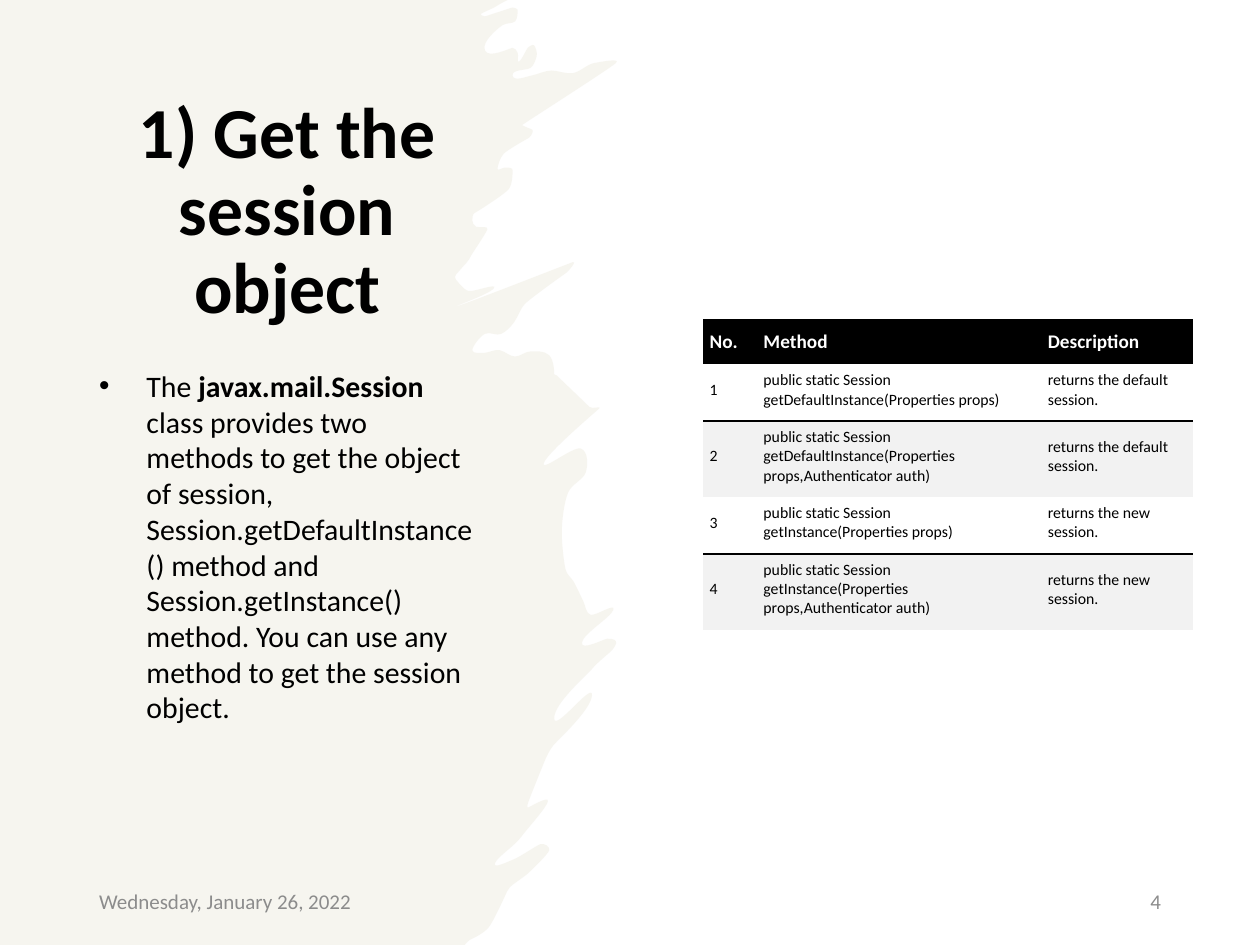
import pptx
import pptx.util
import pptx.dml.color
import pptx.enum.text
import pptx.oxml
import math
from dataclasses import dataclass

Pt = pptx.util.Pt
RGB = pptx.dml.color.RGBColor.from_string
ALIGN = pptx.enum.text.PP_ALIGN
MIDDLE = pptx.enum.text.MSO_ANCHOR.MIDDLE
qn = pptx.oxml.ns.qn
NS = 'xmlns:a="http://schemas.openxmlformats.org/drawingml/2006/main"'
PLAIN = "{2D5ABB26-0587-4C30-8999-92F81FD0307C}"  # table style without grid


@dataclass(frozen=True)
class Theme:
    font: str = "Calibri"
    ink: str = "000000"
    paper: str = "FFFFFF"
    sand: str = "EEECE1"
    band: str = "F2F2F2"
    grey: str = "8C8C8C"
    title: float = 41
    body: float = 17
    foot: float = 12
    head: float = 11
    cell: float = 9


THEME = Theme()

# Torn edge of the panel, bottom to top, on a grid 489 wide and 750 high
GRID = 489, 750
EDGE = [
    (369, 750), (373, 746), (388, 736), (401, 711), (405, 704), (417, 695),
    (436, 675), (429, 670), (408, 682), (393, 685), (414, 664), (435, 636),
    (419, 641), (419, 638), (432, 605), (439, 592), (470, 552), (440, 570),
    (470, 531), (485, 517), (489, 509), (482, 507), (462, 510), (487, 484),
    (469, 488), (463, 477), (455, 461), (449, 452), (446, 423), (451, 391),
    (465, 375), (461, 356), (432, 367), (476, 324), (468, 323), (442, 298),
    (440, 297), (436, 282), (421, 279), (409, 283), (397, 278), (385, 280),
    (375, 278), (385, 265), (398, 265), (408, 256), (417, 241), (449, 217),
    (455, 208), (363, 243), (392, 229), (372, 231), (362, 222), (362, 218),
    (370, 209), (374, 203), (387, 182), (378, 180), (375, 175), (377, 169),
    (404, 150), (407, 135), (401, 133), (395, 134), (400, 122), (419, 110),
    (423, 104), (418, 101), (415, 99), (489, 50), (472, 50), (455, 58),
    (438, 56), (422, 60), (407, 60), (421, 54), (426, 45), (424, 36),
    (419, 38), (412, 49), (411, 42), (407, 38), (385, 40), (399, 20),
    (409, 17), (411, 8), (407, 6), (385, 13), (382, 11), (394, 5), (403, 0),
]

HEADS = ["No.", "Method", "Description"]
CALLS = [
    ("getDefaultInstance(Properties props)", "default"),
    ("getDefaultInstance(Properties props,Authenticator auth)", "default"),
    ("getInstance(Properties props)", "new"),
    ("getInstance(Properties props,Authenticator auth)", "new"),
]


def pull(a, b, c):
    """Give the handle at b, no longer than a third of its shorter side."""
    span = math.dist(a, c) or 1
    size = min(math.dist(a, b), math.dist(b, c)) / 3
    return (c[0] - a[0]) / span * size, (c[1] - a[1]) / span * size


def bend(panel):
    """Turn the straight steps of the torn edge into curves."""
    steps = list(panel._element.iter(qn("a:lnTo")))[-len(EDGE):]
    dots = [(int(s[0].get("x")), int(s[0].get("y"))) for s in steps]
    ends = [dots[0], *dots, dots[-1]]
    for a, b, c, d, step in zip(ends, ends[1:], ends[2:], ends[3:], steps[1:]):
        out, back = pull(a, b, c), pull(b, c, d)
        trio = (b[0] + out[0], b[1] + out[1]), (c[0] - back[0], c[1] - back[1]), c
        marks = "".join(f'<a:pt x="{x:.0f}" y="{y:.0f}"/>' for x, y in trio)
        step.getparent().replace(step, pptx.oxml.parse_xml(
            f"<a:cubicBezTo {NS}>{marks}</a:cubicBezTo>"))


def place(shape, box):
    shape.left, shape.top, shape.width, shape.height = map(Pt, box)


def style(runs, size, color, bold=False):
    for run in runs:
        run.font.name = THEME.font
        run.font.size = Pt(size)
        run.font.bold = bold
        run.font.color.rgb = RGB(color)


def draw_panel(slide, box):
    x, y, w, h = box
    scale = Pt(w) / GRID[0], Pt(h) / GRID[1]
    pen = slide.shapes.build_freeform(0, 0, scale=scale)
    pen.add_line_segments([(0, GRID[1]), *EDGE], close=True)
    panel = pen.convert_to_shape(Pt(x), Pt(y))
    bend(panel)
    panel.shadow.inherit = False
    panel.line.fill.background()
    panel.fill.solid()
    panel.fill.fore_color.rgb = RGB(THEME.sand)
    tint = panel.fill._xPr.find(".//" + qn("a:srgbClr"))
    tint.append(pptx.oxml.parse_xml(f'<a:alpha {NS} val="50000"/>'))
    slide.shapes._spTree.insert(2, panel._element)  # behind the text


def fill_title(slide, box):
    title = slide.shapes.title
    place(title, box)
    frame = title.text_frame
    frame.text = "1) Get the session object"
    frame.auto_size = pptx.enum.text.MSO_AUTO_SIZE.NONE
    frame.vertical_anchor = MIDDLE
    para = frame.paragraphs[0]
    para.alignment = ALIGN.CENTER
    para.line_spacing = 0.9
    style(para.runs, THEME.title, THEME.ink, True)


def fill_body(slide, box):
    body = slide.placeholders[1]
    place(body, box)
    frame = body.text_frame
    frame.auto_size = pptx.enum.text.MSO_AUTO_SIZE.NONE
    para = frame.paragraphs[0]
    for text in (
        "The ",
        "javax.mail.Session ",
        "class provides two methods to get the object of session, "
        "Session.getDefaultInstance() method and Session.getInstance() "
        "method. You can use any method to get the session object.",
    ):
        para.add_run().text = text
    style(para.runs, THEME.body, THEME.ink)
    para.runs[1].font.bold = True
    props = para._p.get_or_add_pPr()
    props.set("marL", str(Pt(27)))
    props.set("indent", str(Pt(-27)))


def add_foot(slide, box, text, align):
    frame = slide.shapes.add_textbox(*map(Pt, box)).text_frame
    frame.word_wrap = True
    frame.vertical_anchor = MIDDLE
    frame.text = text
    para = frame.paragraphs[0]
    para.alignment = align
    para.space_after = Pt(6)
    style(para.runs, THEME.foot, THEME.grey)


def rule(cell, top, bottom):
    """Draw or clear the lines above and below a cell."""
    props = cell._tc.get_or_add_tcPr()
    ink = f'<a:solidFill><a:srgbClr val="{THEME.ink}"/></a:solidFill>'
    for spot, (tag, shown) in enumerate((("lnT", top), ("lnB", bottom))):
        props.insert(spot, pptx.oxml.parse_xml(
            f'<a:{tag} {NS} w="{Pt(1)}">{ink if shown else "<a:noFill/>"}</a:{tag}>'))


def fill_cell(cell, text, row):
    head, band = row == 0, row > 0 and row % 2 == 0
    cell.text = text
    cell.vertical_anchor = MIDDLE
    cell.margin_left, cell.margin_right = Pt(3.6), Pt(2.7)
    cell.margin_top, cell.margin_bottom = Pt(5.5 if head else 2.7), Pt(5.5)
    runs = cell.text_frame.paragraphs[0].runs
    if head:
        style(runs, THEME.head, THEME.paper, True)
    else:
        style(runs, THEME.cell, THEME.ink)
    if head or band:
        cell.fill.solid()
        cell.fill.fore_color.rgb = RGB(THEME.ink if head else THEME.band)
    else:
        cell.fill.background()
    rule(cell, band, row % 2 == 1)


def add_methods(slide, box):
    rows = [HEADS] + [
        (str(n), f"public static Session {call}", f"returns the {kind} session.")
        for n, (call, kind) in enumerate(CALLS, 1)]
    shape = slide.shapes.add_table(len(rows), len(HEADS), *map(Pt, box))
    table = shape.table
    table.horz_banding = False
    table._tbl.tblPr.find(qn("a:tableStyleId")).text = PLAIN
    for col, wide in zip(table.columns, (30.8, 162.5, 86.8)):
        col.width = Pt(wide)
    for r, texts in enumerate(rows):
        table.rows[r].height = Pt(25.6 if r == 0 else 32.5 if r % 2 else 43.4)
        for c, text in enumerate(texts):
            fill_cell(table.cell(r, c), text, r)


def main():
    deck = pptx.Presentation()
    deck.slide_width, deck.slide_height = Pt(720), Pt(540)
    slide = deck.slides.add_slide(deck.slide_layouts[1])
    draw_panel(slide, (0, 0, 352, 540))
    fill_title(slide, (49.5, 50.5, 229.5, 142))
    fill_body(slide, (49.5, 206.5, 229.5, 280))
    add_foot(slide, (49.5, 500.5, 162, 28.75), "Wednesday, January 26, 2022", ALIGN.LEFT)
    add_foot(slide, (508.5, 500.5, 162, 28.75), "4", ALIGN.RIGHT)
    add_methods(slide, (401.9, 182.5, 280.1, 177.4))
    deck.save("out.pptx")


if __name__ == "__main__":
    main()
